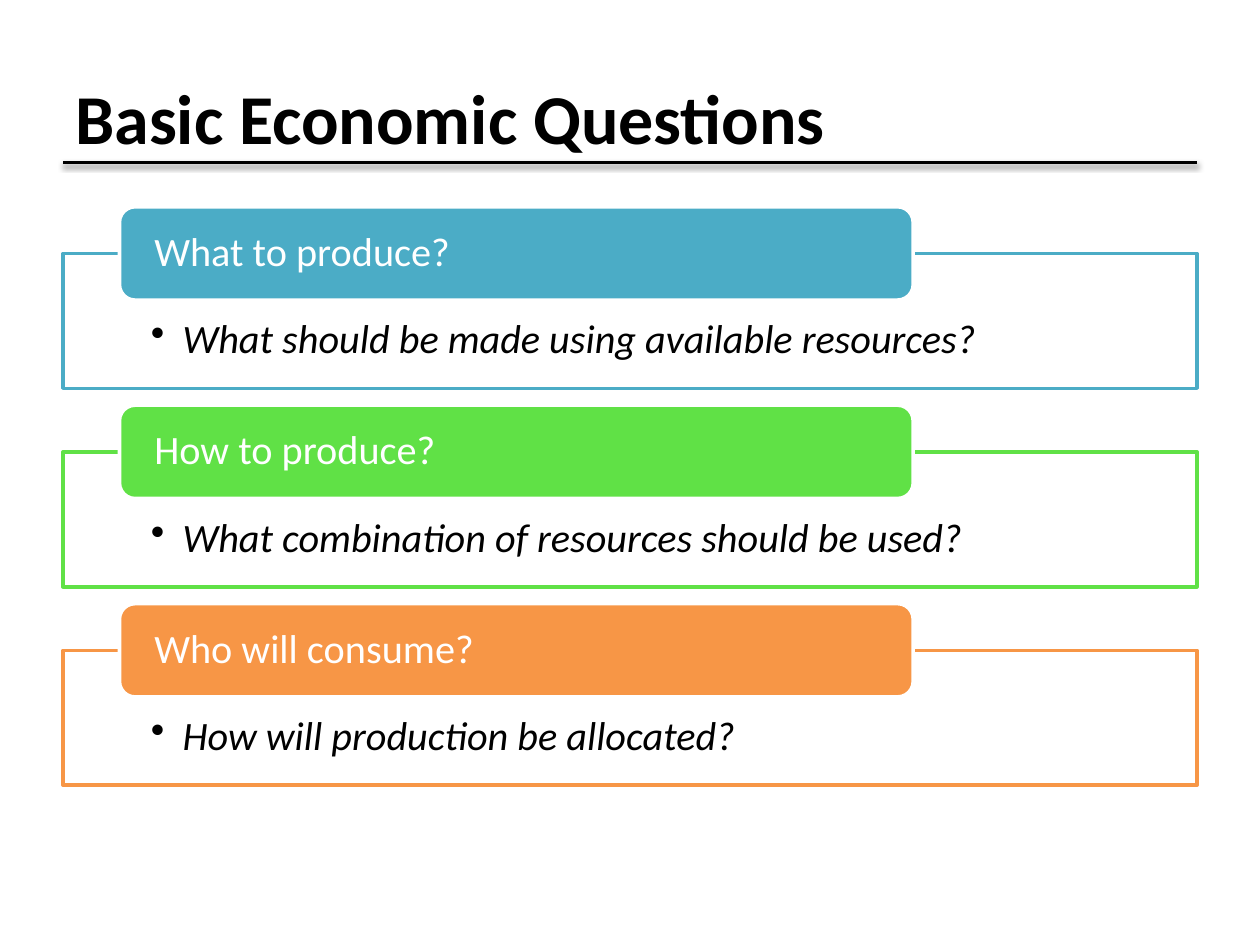
from lxml.etree import SubElement
from pptx import Presentation
from pptx.dml.color import RGBColor
from pptx.enum.shapes import MSO_CONNECTOR, MSO_SHAPE
from pptx.enum.text import MSO_ANCHOR, PP_ALIGN
from pptx.oxml.ns import qn
from pptx.util import Cm, Pt

TITLE = "Basic Economic Questions"
ITEMS = [
    ("What to produce?", "What should be made using available resources?", "4BACC6"),
    ("How to produce?", "What combination of resources should be used?", "60E146"),
    ("Who will consume?", "How will production be allocated?", "F79646"),
]
THEME = {"font": "Calibri", "ink": "000000", "paper": "FFFFFF",
         "title": 40, "body": 23, "line": 2}

LEFT, WIDE = 1.27, 22.86
TOP, STEP = 5.11, 4.0
BOX_H = 2.72
TAB_X, TAB_W, TAB_H = 2.41, 16, 1.88
RISE = 0.94  # how far a tab stands above its box


def color(name):
    return RGBColor.from_string(name)


def write(frame, text, size, ink, anchor, pads, **style):
    frame.text = text
    frame.word_wrap = True
    frame.vertical_anchor = anchor
    for side, pad in zip(("left", "top", "right", "bottom"), pads):
        setattr(frame, f"margin_{side}", Cm(pad))
    para = frame.paragraphs[0]
    para.alignment = PP_ALIGN.LEFT
    font = para.runs[0].font
    font.color.rgb = color(ink)
    for key, value in {"name": THEME["font"], "size": Pt(size), **style}.items():
        setattr(font, key, value)
    return para


def add_box(kind, place, fill, line):
    box = slide.shapes.add_shape(kind, *map(Cm, place))
    box.shadow.inherit = False
    box.fill.solid()
    box.fill.fore_color.rgb = color(fill)
    box.line.color.rgb = color(line)
    box.line.width = Pt(THEME["line"])
    return box


def add_bullet(para):
    para.level = 1
    props = para._p.get_or_add_pPr()
    props.set("marL", str(Cm(0.64)))
    props.set("indent", str(-Cm(0.64)))
    SubElement(props, qn("a:buChar"), char="•")


def add_rule(y):
    rule = slide.shapes.add_connector(
        MSO_CONNECTOR.STRAIGHT, Cm(LEFT), Cm(y), Cm(LEFT + WIDE), Cm(y))
    rule.line.color.rgb = color(THEME["ink"])
    rule.line.width = Pt(THEME["line"])
    effects = SubElement(rule._element.spPr, qn("a:effectLst"))
    shade = SubElement(effects, qn("a:outerShdw"), blurRad=str(Pt(3.1)),
                       dist=str(Pt(1.6)), dir="5400000", rotWithShape="0")
    ink = SubElement(shade, qn("a:srgbClr"), val=THEME["ink"])
    SubElement(ink, qn("a:alpha"), val="38000")


deck = Presentation()
deck.slide_width, deck.slide_height = Cm(25.4), Cm(19.05)
slide = deck.slides.add_slide(deck.slide_layouts[5])

add_rule(3.28)
title = slide.shapes.title
title.left, title.top, title.width, title.height = map(Cm, (LEFT, 0.76, WIDE, 3.18))
write(title.text_frame, TITLE, THEME["title"], THEME["ink"], MSO_ANCHOR.MIDDLE,
      (0.25, 0.13, 0.25, 0.13), bold=True)

for row, (head, note, hue) in enumerate(ITEMS):
    y = TOP + row * STEP
    box = add_box(MSO_SHAPE.RECTANGLE, (LEFT, y, WIDE, BOX_H), THEME["paper"], hue)
    para = write(box.text_frame, note, THEME["body"], THEME["ink"], MSO_ANCHOR.TOP,
                 (1.77, 1.32, 1.77, 0.46), italic=True)
    add_bullet(para)
    para.line_spacing = 0.9
    tab = add_box(MSO_SHAPE.ROUNDED_RECTANGLE, (TAB_X, y - RISE, TAB_W, TAB_H),
                  hue, THEME["paper"])
    para = write(tab.text_frame, head, THEME["body"], THEME["paper"],
                 MSO_ANCHOR.MIDDLE, (0.61, 0, 0.61, 0))
    para.line_spacing = 0.9

deck.save("out.pptx")
